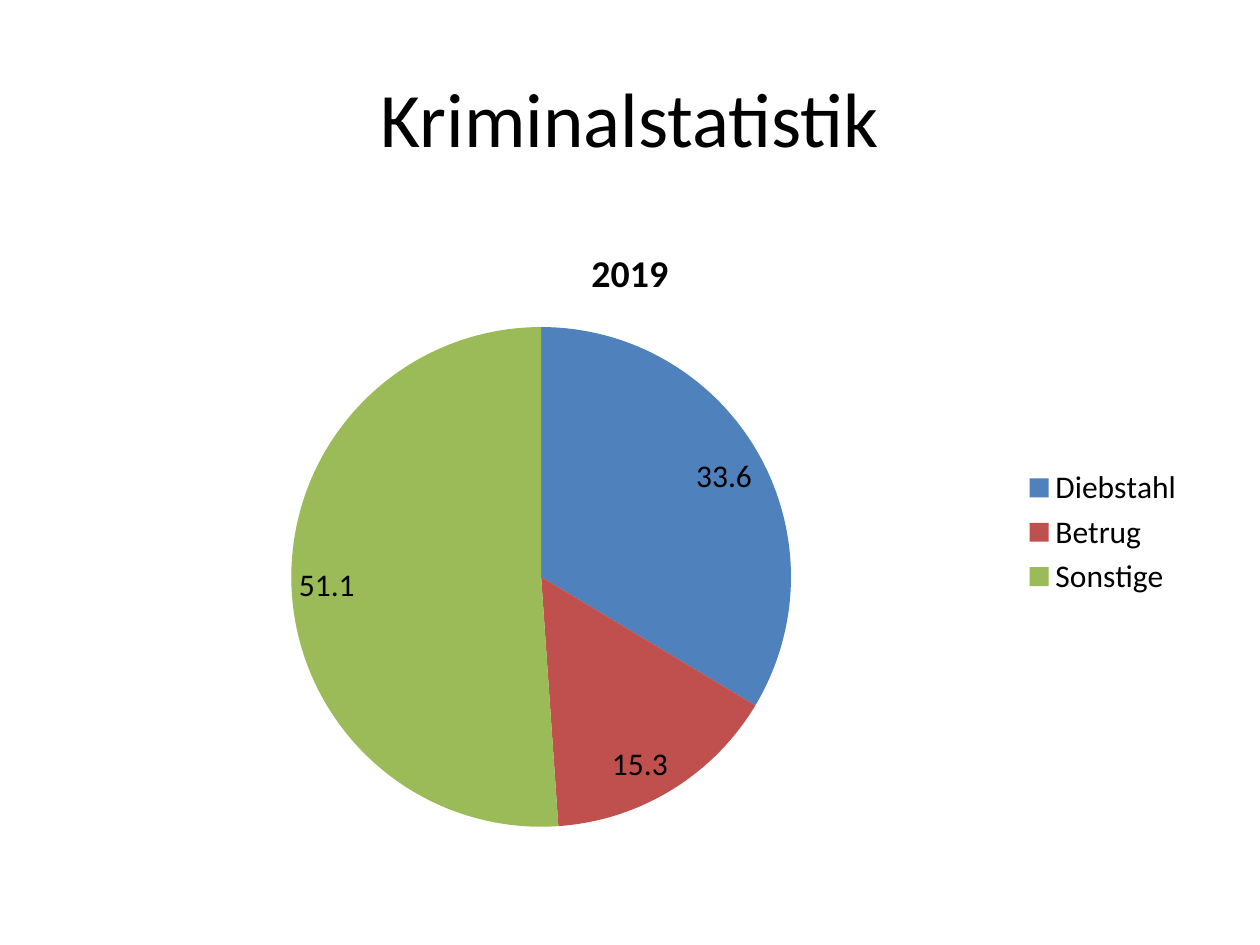
"""Build a slide with a pie chart of crime figures."""
import dataclasses

import pptx
import pptx.chart.data
import pptx.dml.color
import pptx.enum.chart
import pptx.enum.text
import pptx.util

Inches = pptx.util.Inches


@dataclasses.dataclass(frozen=True)
class Theme:
    """Hold the colours, font and type sizes."""
    face: str = "Calibri"
    ink: str = "000000"
    fills: tuple = ("4F81BD", "C0504D", "9BBB59")
    head: float = 44
    title: float = 21.6
    body: float = 18


THEME = Theme()
SHARES = {"Diebstahl": 33.6, "Betrug": 15.3, "Sonstige": 51.1}


def color(code):
    """Turn a hex code into a colour."""
    return pptx.dml.color.RGBColor.from_string(code)


def style(font, size, bold=False):
    """Set the face, size, weight and colour of a font."""
    font.name = THEME.face
    font.size = pptx.util.Pt(size)
    font.bold = bold
    font.color.rgb = color(THEME.ink)


def write(frame, text, *, size, bold=False, align=pptx.enum.text.PP_ALIGN.CENTER):
    """Put one formatted paragraph into a text frame."""
    para = frame.paragraphs[0]
    para.alignment = align
    run = para.add_run()
    run.text = text
    style(run.font, size, bold)


def add_head(slide, text):
    """Add the slide heading."""
    box = slide.shapes.add_textbox(Inches(0.5), Inches(0.3), Inches(9), Inches(1.25))
    frame = box.text_frame
    frame.word_wrap = True
    frame.vertical_anchor = pptx.enum.text.MSO_ANCHOR.MIDDLE
    write(frame, text, size=THEME.head)


def add_pie(slide, name, shares):
    """Add a pie chart with title, legend and value labels."""
    data = pptx.chart.data.CategoryChartData()
    data.categories = list(shares)
    data.add_series(name, list(shares.values()))
    chart = slide.shapes.add_chart(
        pptx.enum.chart.XL_CHART_TYPE.PIE,
        Inches(0.5), Inches(1.75), Inches(9), Inches(4.95), data).chart
    style(chart.font, THEME.body)

    chart.has_title = True
    write(chart.chart_title.text_frame, name, size=THEME.title, bold=True)
    chart.chart_title.include_in_layout = False
    chart.has_legend = True
    chart.legend.position = pptx.enum.chart.XL_LEGEND_POSITION.RIGHT
    chart.legend.include_in_layout = False
    style(chart.legend.font, THEME.body)

    plot = chart.plots[0]
    plot.vary_by_categories = True
    plot.has_data_labels = True
    labels = plot.data_labels
    labels.show_value = True
    labels.show_percentage = False
    labels.position = pptx.enum.chart.XL_LABEL_POSITION.INSIDE_END
    style(labels.font, THEME.body)
    for spot, code in enumerate(THEME.fills):
        fill = plot.series[0].points[spot].format.fill
        fill.solid()
        fill.fore_color.rgb = color(code)


def main():
    """Build and save the deck."""
    deck = pptx.Presentation()
    deck.slide_width, deck.slide_height = Inches(10), Inches(7.5)
    slide = deck.slides.add_slide(deck.slide_layouts[6])
    add_head(slide, "Kriminalstatistik")
    add_pie(slide, "2019", SHARES)
    deck.save("out.pptx")


if __name__ == "__main__":
    main()
